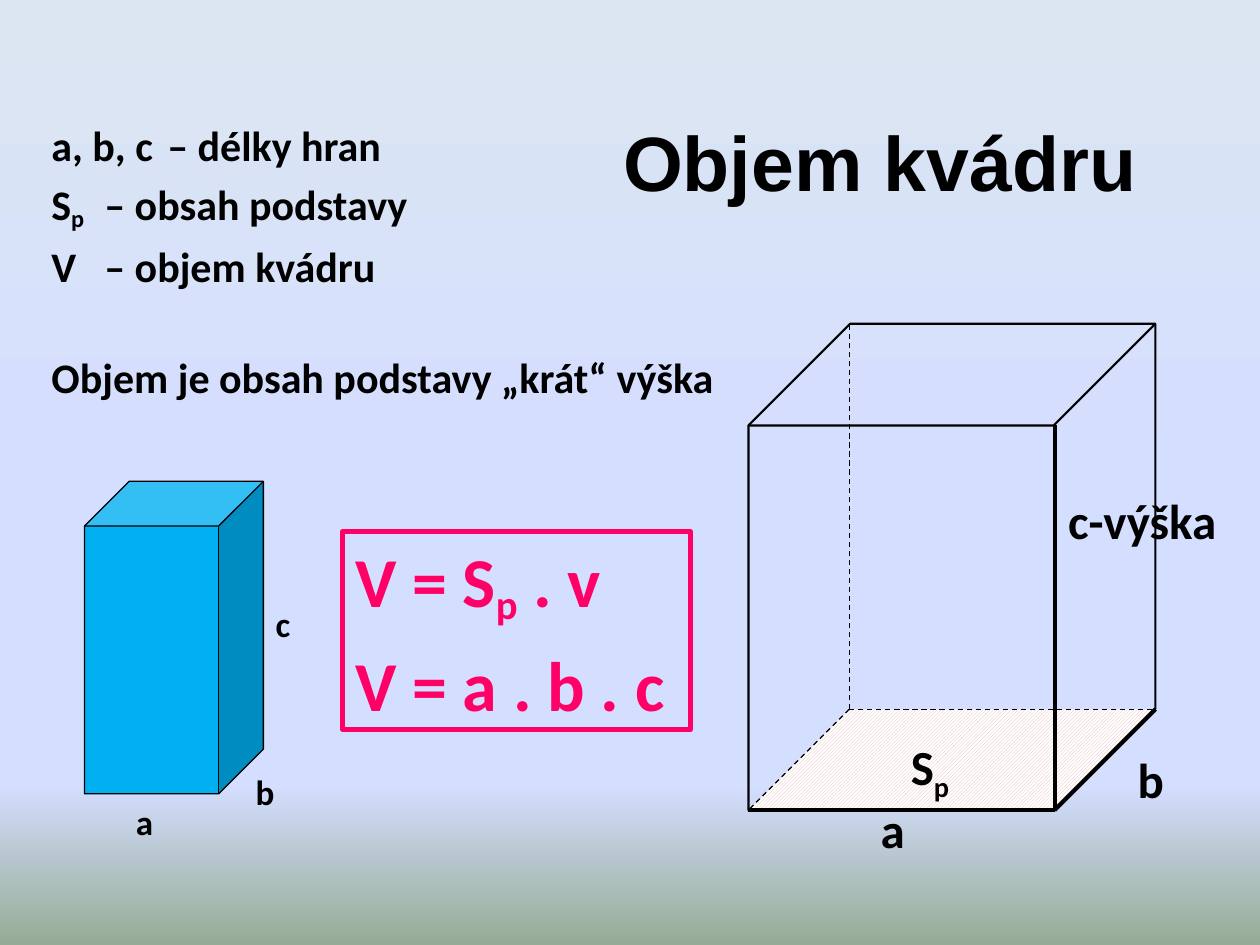
import pptx
import pptx.dml.color
import pptx.enum.dml
import pptx.enum.shapes
import pptx.enum.text
import pptx.oxml
import pptx.oxml.ns
import pptx.util
from pptx.util import Inches

qn = pptx.oxml.ns.qn
SHAPE = pptx.enum.shapes.MSO_SHAPE
BLACK = "000000"
PINK = "FF0066"


def rgb(value):
    return pptx.dml.color.RGBColor.from_string(value)


def set_background(s, stops):
    fill = s.background.fill
    fill.gradient()
    fill.gradient_angle = 270
    stop_list = next(s.element.iter(qn("a:gsLst")))
    for stop in list(stop_list):
        stop_list.remove(stop)
    for position, color in stops:
        stop = pptx.oxml.parse_xml(
            f'<a:gs {pptx.oxml.ns.nsdecls("a")} pos="{position * 1000}">'
            f'<a:srgbClr val="{color}"/></a:gs>')
        stop_list.append(stop)


def add_run(p, text, size, color=BLACK, font="Calibri", baseline=0):
    r = p.add_run()
    r.text = text
    r.font.size = pptx.util.Pt(size)
    r.font.bold = True
    r.font.name = font
    r.font.color.rgb = rgb(color)
    if baseline:
        r.font._element.set("baseline", str(baseline * 1000))


def add_tab_stop(p, position):
    pPr = p._p.get_or_add_pPr()
    tabs = pptx.oxml.parse_xml(
        f'<a:tabLst {pptx.oxml.ns.nsdecls("a")}>'
        f'<a:tab pos="{Inches(position)}" algn="l"/></a:tabLst>')
    pPr.append(tabs)


def write_text(tf, lines, size, color=BLACK, spacing=None, indent=0.38):
    tf.word_wrap = True
    tf.vertical_anchor = pptx.enum.text.MSO_ANCHOR.TOP
    for i, runs in enumerate(lines):
        p = tf.paragraphs[0] if i == 0 else tf.add_paragraph()
        p.alignment = pptx.enum.text.PP_ALIGN.LEFT
        p.space_before = pptx.util.Pt(size * 0.2)
        if spacing:
            p.line_spacing = spacing
        pPr = p._p.get_or_add_pPr()
        pPr.set("marL", str(Inches(indent)))
        pPr.set("indent", str(Inches(-indent)))
        for text, baseline in runs:
            add_run(p, text, size, color, baseline=baseline)


def add_text(shapes, box, lines, size, **options):
    sp = shapes.add_textbox(*map(Inches, box))
    write_text(sp.text_frame, lines, size, **options)
    return sp


def add_label(shapes, box, runs, size):
    add_text(shapes, box, [runs], size, spacing=0.9)


def add_outlined(shapes, kind, box, line=None, width=1, fill=None, adjust=None):
    sp = shapes.add_shape(kind, *map(Inches, box))
    sp.shadow.inherit = False
    if adjust is not None:
        sp.adjustments[0] = adjust
    if fill:
        sp.fill.solid()
        sp.fill.fore_color.rgb = rgb(fill)
    else:
        sp.fill.background()
    if line:
        sp.line.color.rgb = rgb(line)
        sp.line.width = pptx.util.Pt(width)
    else:
        sp.line.fill.background()
    return sp


def add_edge(shapes, start, end, hidden=False):
    edge = shapes.add_connector(
        pptx.enum.shapes.MSO_CONNECTOR.STRAIGHT, *map(Inches, start + end))
    edge.line.color.rgb = rgb(BLACK)
    edge.line.width = pptx.util.Pt(0.75 if hidden else 2.25)
    if hidden:
        edge.line.dash_style = pptx.enum.dml.MSO_LINE.DASH
    edge._element.spPr.append(pptx.oxml.parse_xml(
        f'<a:effectLst {pptx.oxml.ns.nsdecls("a")}/>'))


def add_title(s):
    title = s.shapes.title
    title.left, title.top, title.width, title.height = map(
        Inches, (4.57, 0.84, 4.83, 0.87))
    tf = title.text_frame
    tf.vertical_anchor = pptx.enum.text.MSO_ANCHOR.MIDDLE
    p = tf.paragraphs[0]
    p.alignment = pptx.enum.text.PP_ALIGN.CENTER
    add_run(p, "Objem kvádru", 44, font="Arial")


def add_definitions(shapes):
    sp = add_text(shapes, (0.31, 0.9, 5, 1.47), [
        [("a, b, c\t– délky hran", 0)],
        [("S", 0), ("p", -16), ("\t– obsah podstavy", 0)],
        [("V\t– objem kvádru", 0)],
    ], 24, indent=0.42)
    add_tab_stop(sp.text_frame.paragraphs[0], 1.04)


def add_formula(shapes):
    sp = add_outlined(shapes, SHAPE.RECTANGLE, (2.72, 4.22, 2.76, 1.57), PINK, 3)
    write_text(sp.text_frame, [
        [("V = S", 0), ("p", -16), (" . v", 0)],
        [("V = a . b . c", 0)],
    ], 40, color=PINK)


def add_wire_cuboid(shapes):
    left, top, width, height, depth = 5.94, 2.57, 3.23, 3.86, 0.8
    right, bottom = left + width, top + height
    front_right, back_left, back_bottom = right - depth, left + depth, bottom - depth

    base = add_outlined(shapes, SHAPE.PARALLELOGRAM,
                        (left, back_bottom, width, depth), adjust=1)
    base.fill.patterned()
    base.fill.pattern = pptx.enum.dml.MSO_PATTERN.DARK_UPWARD_DIAGONAL
    base.fill.fore_color.rgb = rgb("E6B9B8")
    base.fill.back_color.rgb = rgb("FFFFFF")

    add_outlined(shapes, SHAPE.CUBE, (left, top, width, height), BLACK, 1.25,
                 adjust=0.25)
    hidden_corner = (back_left, back_bottom)
    for end in ((back_left, top), (right, back_bottom), (left, bottom)):
        add_edge(shapes, hidden_corner, end, hidden=True)
    front_corner = (front_right, bottom)
    for end in ((right, back_bottom), (front_right, top + depth), (left, bottom)):
        add_edge(shapes, front_corner, end)

    add_label(shapes, (8.38, 3.9, 1.57, 0.47), [("c-výška", 0)], 28)
    add_label(shapes, (8.93, 5.95, 0.47, 0.47), [("b", 0)], 28)
    add_label(shapes, (6.89, 6.35, 0.47, 0.47), [("a", 0)], 28)
    add_label(shapes, (7.13, 5.8, 0.71, 0.55), [("S", 0), ("p", -25)], 28)


def add_solid_cuboid(shapes):
    group = shapes.add_group_shape().shapes
    add_outlined(group, SHAPE.CUBE, (0.67, 3.82, 1.42, 2.48), BLACK, 0.75,
                 fill="00B0F0", adjust=0.25)
    for name, left, top, width in (("a", 0.98, 6.34, 0.32),
                                   ("c", 2.09, 4.77, 0.4),
                                   ("b", 1.93, 6.1, 0.31)):
        add_label(group, (left, top, width, 0.47), [(name, 0)], 20)


def main():
    prs = pptx.Presentation()
    prs.slide_width, prs.slide_height = Inches(10), Inches(7.5)
    s = prs.slides.add_slide(prs.slide_layouts[5])
    set_background(s, [(0, "DCE6F2"), (53, "D4DEFF"), (83, "D4DEFF"), (100, "96AB94")])
    add_title(s)
    add_text(s.shapes, (0.31, 2.74, 5.64, 0.71),
             [[("Objem je obsah podstavy „krát“ výška", 0)]], 24)
    add_formula(s.shapes)
    add_wire_cuboid(s.shapes)
    add_definitions(s.shapes)
    add_solid_cuboid(s.shapes)
    prs.save("out.pptx")


if __name__ == "__main__":
    main()
